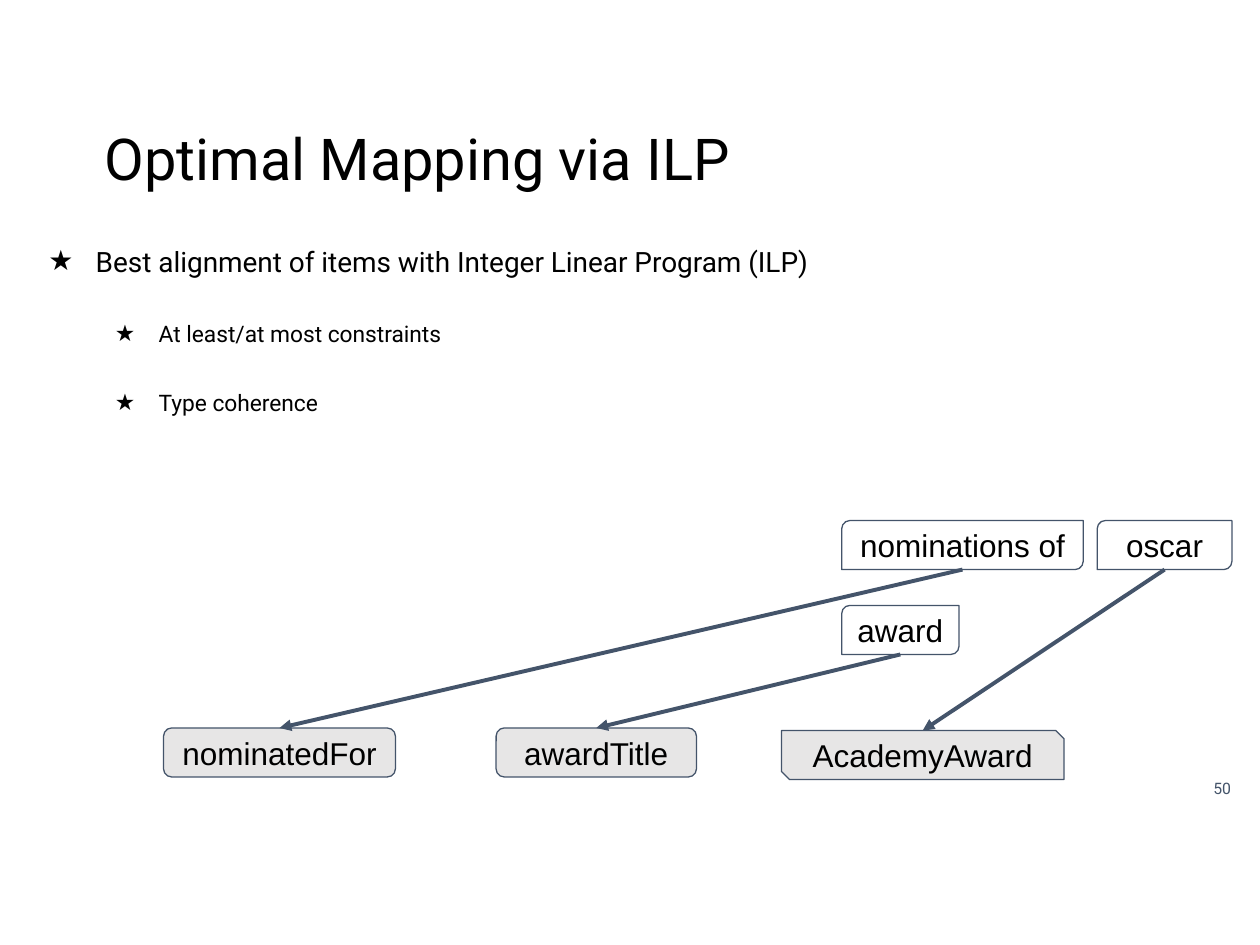
import pptx
import pptx.dml.color
import pptx.enum.shapes
import pptx.enum.text
import pptx.oxml
import pptx.oxml.ns
import pptx.util
from lxml import etree

Pt = pptx.util.Pt
SHAPES = pptx.enum.shapes.MSO_SHAPE
ALIGN = pptx.enum.text.PP_ALIGN
ANCHOR = pptx.enum.text.MSO_ANCHOR
SLATE, GREY, BLACK = "44546A", "E7E6E6", "000000"
NODE_HEIGHT = 28


def colour(hex_text):
    return pptx.dml.color.RGBColor.from_string(hex_text)


def set_all(target, values):
    for name, value in values.items():
        setattr(target, name, value)


def place(shape, box):
    set_all(shape, dict(zip(("left", "top", "width", "height"), map(Pt, box))))


def format_frame(frame, anchor):
    inset = Pt(7.2)
    set_all(frame, {
        "word_wrap": True, "auto_size": pptx.enum.text.MSO_AUTO_SIZE.NONE,
        "vertical_anchor": anchor, "margin_left": inset, "margin_right": inset,
        "margin_top": inset, "margin_bottom": inset})


def write(para, text, size, font="Roboto", ink=BLACK, **layout):
    set_all(para, layout)
    span = para.add_run()
    span.text = text
    set_all(span.font, {"size": Pt(size), "name": font})
    span.font.color.rgb = colour(ink)


def add_bullet(para, margin, indent):
    properties = para._p.get_or_add_pPr()
    properties.set("marL", str(Pt(margin)))
    properties.set("indent", str(Pt(indent)))
    qn = pptx.oxml.ns.qn
    etree.SubElement(properties, qn("a:buFont")).set("typeface", "Roboto")
    etree.SubElement(properties, qn("a:buChar")).set("char", "★")


def add_title(page, box, text):
    title = page.shapes.title
    place(title, box)
    format_frame(title.text_frame, ANCHOR.TOP)
    write(title.text_frame.paragraphs[0], text, 33,
          alignment=ALIGN.LEFT, line_spacing=0.9)


def add_list(page, box, items):
    """Fill the body placeholder from (level, text) pairs."""
    body = page.placeholders[1]
    place(body, box)
    frame = body.text_frame
    format_frame(frame, ANCHOR.TOP)
    styles = [(36, -27, 16, 0), (72, -25, 13, 16)]
    for index, (level, text) in enumerate(items):
        para = frame.add_paragraph() if index else frame.paragraphs[0]
        margin, indent, size, before = styles[level]
        add_bullet(para, margin, indent)
        write(para, text, size, level=level, line_spacing=1.5,
              space_before=Pt(before))


def add_page_number(page, box, text):
    frame = page.shapes.add_textbox(*map(Pt, box)).text_frame
    format_frame(frame, ANCHOR.MIDDLE)
    write(frame.paragraphs[0], text, 9, ink=SLATE, alignment=ALIGN.RIGHT)


def add_node(page, text, box, kind, corners, fill=None):
    node = page.shapes.add_shape(kind, *map(Pt, box))
    node.shadow.inherit = False
    for index, corner in enumerate(corners):
        node.adjustments[index] = corner
    if fill:
        node.fill.solid()
        node.fill.fore_color.rgb = colour(fill)
    else:
        node.fill.background()
    node.line.color.rgb = colour(SLATE)
    node.line.width = Pt(0.75)
    format_frame(node.text_frame, ANCHOR.MIDDLE)
    write(node.text_frame.paragraphs[0], text, 18, "Arial", alignment=ALIGN.CENTER)
    return node


def add_arrow(page, phrase, target):
    """Draw an arrow from the bottom of a phrase to the top of its target."""
    arrow = page.shapes.add_connector(
        pptx.enum.shapes.MSO_CONNECTOR.STRAIGHT,
        phrase.left + phrase.width // 2, phrase.top + phrase.height,
        target.left + target.width // 2, target.top)
    arrow.line.color.rgb = colour(SLATE)
    arrow.line.width = Pt(2.25)
    qn = pptx.oxml.ns.qn
    etree.SubElement(arrow.line._get_or_add_ln(), qn("a:tailEnd")).set("type", "triangle")
    etree.SubElement(arrow._element.spPr, qn("a:effectLst"))


def add_mapping(page, box):
    """Draw phrases above, ontology items below, and arrows between them."""
    left, top, width, height = box
    base = top + height - NODE_HEIGHT
    right = left + width
    property_style = (SHAPES.ROUNDED_RECTANGLE, [0.167], GREY)
    class_style = (SHAPES.SNIP_2_DIAG_RECTANGLE, [0, 0.167], GREY)
    phrase_style = (SHAPES.ROUND_2_DIAG_RECTANGLE, [0.167, 0])
    targets = [
        ("nominatedFor", left, base - 1.5, 132.5, property_style),
        ("awardTitle", left + 190, base - 1.5, 114.5, property_style),
        ("AcademyAward", left + 353, base, 161.5, class_style)]
    phrases = [
        ("nominations of", left + 387.5, top, 138, phrase_style),
        ("award", left + 387.5, top + 48.5, 67, phrase_style),
        ("oscar", right - 77, top, 77, phrase_style)]
    target_nodes, phrase_nodes = (
        [add_node(page, text, (x, y, wide, NODE_HEIGHT), *style)
         for text, x, y, wide, style in row] for row in (targets, phrases))
    for phrase, target in zip(phrase_nodes, target_nodes):
        add_arrow(page, phrase, target)


def main():
    deck = pptx.Presentation()
    set_all(deck, {"slide_width": Pt(720), "slide_height": Pt(540)})
    page = deck.slides.add_slide(deck.slide_layouts[1])
    add_list(page, (11.5, 123, 698.5, 162.5), [
        (0, "Best alignment of items with Integer Linear Program (ILP)"),
        (1, "At least/at most constraints"),
        (1, "Type coherence")])
    add_title(page, (52.5, 67.5, 671, 45.5), "Optimal Mapping via ILP")
    add_page_number(page, (667.5, 435, 43, 31), "50")
    add_mapping(page, (93.5, 297.5, 610.5, 148))
    deck.save("out.pptx")


if __name__ == "__main__":
    main()
